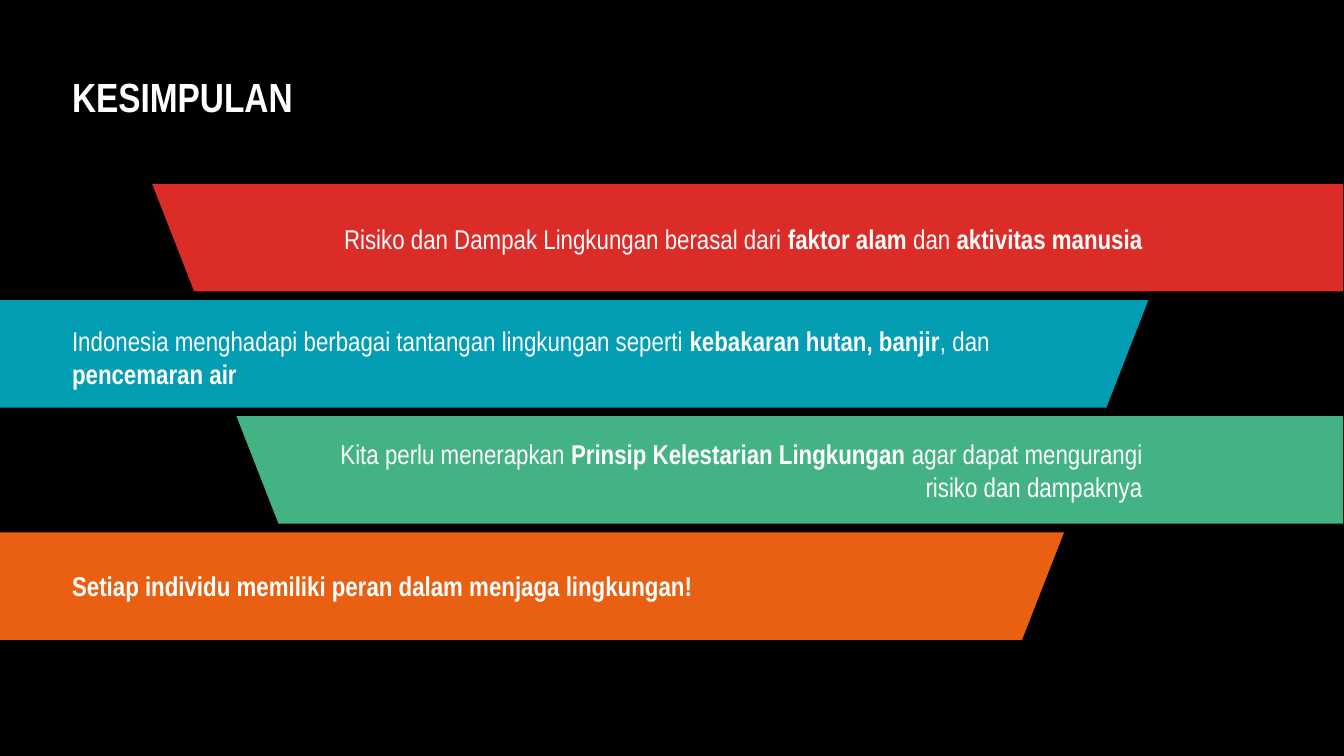
from dataclasses import dataclass

from pptx import Presentation
from pptx.dml.color import RGBColor
from pptx.enum.text import MSO_ANCHOR, PP_ALIGN
from pptx.util import Pt


@dataclass(frozen=True)
class Theme:
    font: str = "Arial Narrow"
    title_size: int = 48
    body_size: int = 32
    background: str = "000000"
    text: str = "FFFFFF"
    red: str = "DB2C27"
    blue: str = "039DB4"
    green: str = "44B384"
    orange: str = "EA6012"


class Deck:
    """Draw styled elements on the current slide, with lengths in points."""

    def __init__(self, prs, theme):
        self.theme = theme
        self.s = prs.slides.add_slide(prs.slide_layouts[6])
        fill = self.s.background.fill
        fill.solid()
        fill.fore_color.rgb = RGBColor.from_string(theme.background)

    def bar(self, points, color):
        corners = [(Pt(x), Pt(y)) for x, y in points]
        builder = self.s.shapes.build_freeform(*corners[0])
        builder.add_line_segments(corners[1:], close=True)
        sp = builder.convert_to_shape()
        sp.shadow.inherit = False
        sp.fill.solid()
        sp.fill.fore_color.rgb = RGBColor.from_string(color)
        sp.line.fill.background()

    def text(self, x, y, w, h, parts, size, align=PP_ALIGN.LEFT, spacing=1.0):
        tf = self.s.shapes.add_textbox(Pt(x), Pt(y), Pt(w), Pt(h)).text_frame
        tf.word_wrap = True
        tf.vertical_anchor = MSO_ANCHOR.MIDDLE
        p = tf.paragraphs[0]
        p.alignment = align
        p.line_spacing = spacing
        for words, bold in parts:
            r = p.add_run()
            r.text = words
            r.font.name = self.theme.font
            r.font.size = Pt(size)
            r.font.bold = bold
            r.font.color.rgb = RGBColor.from_string(self.theme.text)


WIDTH, HEIGHT = 1583.28, 890.64
MARGIN, TEXT_RIGHT = 77.8, 1353
BAR_TOP, BAR_HEIGHT, BAR_PITCH = 216.7, 126.7, 136.8
BAR_RIGHT, SLANT = 1582, 49.5
TEXT_HEIGHT = 90.7


def main():
    prs = Presentation()
    prs.slide_width, prs.slide_height = Pt(WIDTH), Pt(HEIGHT)
    theme = Theme()
    deck = Deck(prs, theme)
    deck.text(MARGIN, 72.7, 713.5, 88.6, [("KESIMPULAN", True)],
              theme.title_size, spacing=0.9)

    conclusions = [
        (theme.red, BAR_RIGHT, 179.3, 1120.3, 18.7, [
            ("Risiko dan Dampak Lingkungan berasal dari ", False),
            ("faktor alam ", True), ("dan ", False),
            ("aktivitas manusia", True)]),
        (theme.blue, 0, 1352.9, 1219.7, 21.6, [
            ("Indonesia menghadapi berbagai tantangan lingkungan seperti ", False),
            ("kebakaran hutan, banjir", True), (", dan ", False),
            ("pencemaran air", True)]),
        (theme.green, BAR_RIGHT, 278.6, 992.9, 18, [
            ("Kita perlu menerapkan ", False),
            ("Prinsip Kelestarian Lingkungan ", True),
            ("agar dapat mengurangi risiko dan dampaknya", False)]),
        (theme.orange, 0, 1253.5, 1120.3, 18, [
            ("Setiap individu memiliki peran dalam menjaga lingkungan!", True)]),
    ]
    for i, (color, edge, tip, text_width, offset, parts) in enumerate(conclusions):
        top = BAR_TOP + i * BAR_PITCH
        bottom = top + BAR_HEIGHT
        from_right = edge > tip
        foot = tip + SLANT if from_right else tip - SLANT
        deck.bar([(edge, top), (tip, top), (foot, bottom), (edge, bottom)], color)
        x = TEXT_RIGHT - text_width if from_right else MARGIN
        align = PP_ALIGN.RIGHT if from_right else PP_ALIGN.LEFT
        deck.text(x, top + offset, text_width, TEXT_HEIGHT, parts,
                  theme.body_size, align)

    prs.save("out.pptx")


if __name__ == "__main__":
    main()
